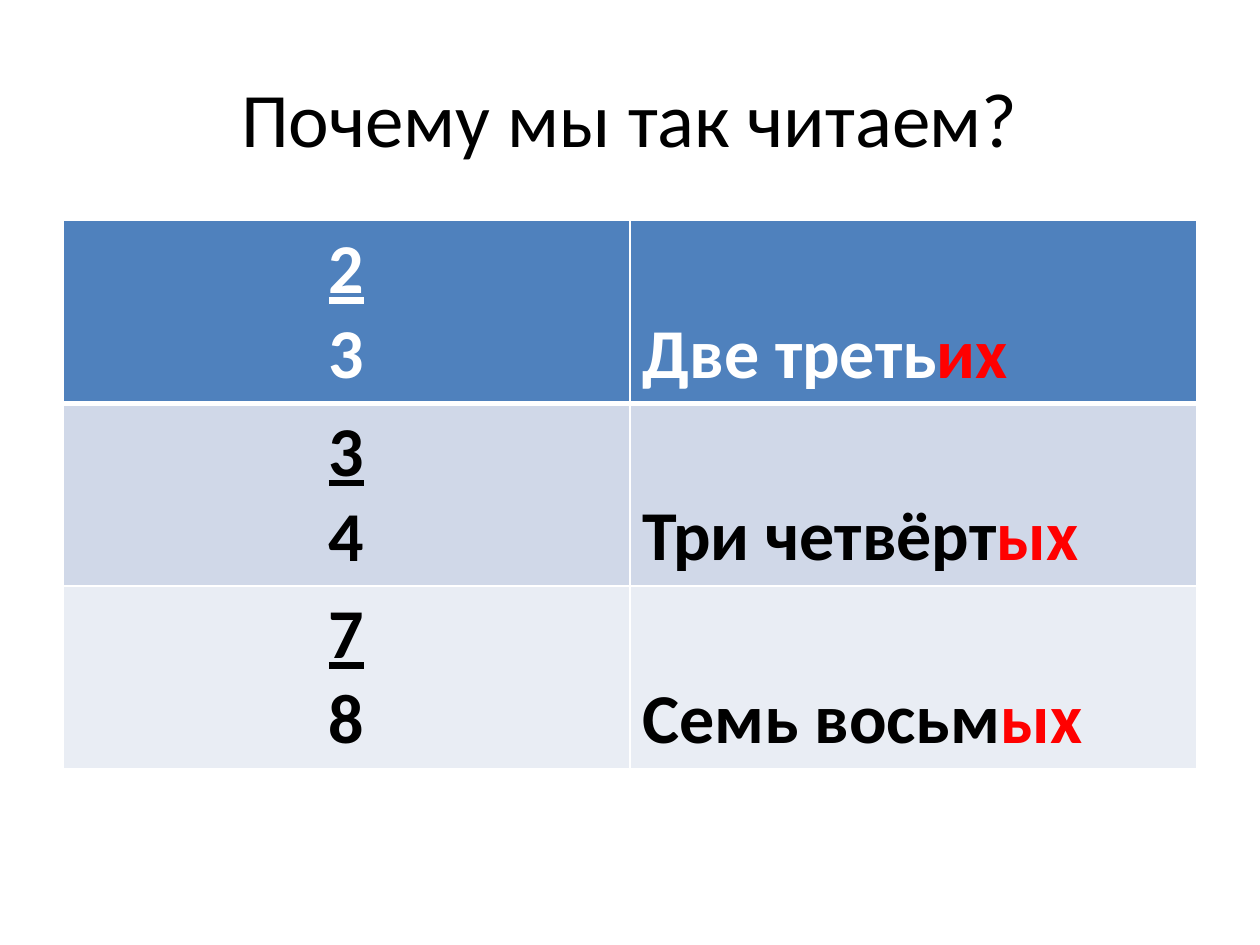
from dataclasses import dataclass

import pptx
import pptx.dml.color
import pptx.enum.text
import pptx.oxml
import pptx.oxml.ns
import pptx.util

Pt = pptx.util.Pt
PP_ALIGN = pptx.enum.text.PP_ALIGN
MSO_ANCHOR = pptx.enum.text.MSO_ANCHOR


@dataclass(frozen=True)
class Theme:
    font: str = "Calibri"
    title_size: float = 44
    cell_size: float = 40
    black: str = "000000"
    white: str = "FFFFFF"
    ending: str = "FF0000"
    header_fill: str = "4F81BD"
    odd_fill: str = "D0D8E8"
    even_fill: str = "E9EDF4"
    thin: float = 1
    thick: float = 3


@dataclass(frozen=True)
class Fraction:
    numerator: str
    denominator: str
    stem: str
    ending: str
    fill: str
    color: str
    top_line: float
    bottom_line: float


THEME = Theme()
FRACTIONS = [
    Fraction("2", "3", "Две треть", "их", THEME.header_fill, THEME.white, THEME.thin, THEME.thick),
    Fraction("3", "4", "Три четвёрт", "ых", THEME.odd_fill, THEME.black, THEME.thick, THEME.thin),
    Fraction("7", "8", "Семь восьм", "ых", THEME.even_fill, THEME.black, THEME.thin, THEME.thin),
]
MARGIN, CONTENT_WIDTH, ROW_HEIGHT = 36, 648, 104.4


def add_run(paragraph, text: str, size: float, color: str,
            bold: bool = False, underline: bool = False) -> None:
    run = paragraph.add_run()
    run.text = text
    run.font.name = THEME.font
    run.font.size = Pt(size)
    run.font.bold = bold
    run.font.underline = underline
    run.font.color.rgb = pptx.dml.color.RGBColor.from_string(color)


def style_cell(cell, fraction: Fraction) -> None:
    cell.fill.solid()
    cell.fill.fore_color.rgb = pptx.dml.color.RGBColor.from_string(fraction.fill)
    cell.vertical_anchor = MSO_ANCHOR.BOTTOM
    # Borders stand before the fill in the cell properties
    widths = {"lnL": THEME.thin, "lnR": THEME.thin,
              "lnT": fraction.top_line, "lnB": fraction.bottom_line}
    properties = cell._tc.get_or_add_tcPr()
    for position, (side, width) in enumerate(widths.items()):
        border = pptx.oxml.parse_xml(
            f'<a:{side} {pptx.oxml.ns.nsdecls("a")} w="{Pt(width)}"><a:solidFill>'
            f'<a:srgbClr val="{THEME.white}"/></a:solidFill></a:{side}>')
        properties.insert(position, border)


def fill_row(number_cell, reading_cell, fraction: Fraction) -> None:
    for cell in (number_cell, reading_cell):
        style_cell(cell, fraction)

    # Underlined numerator above the denominator
    numerator = number_cell.text_frame.paragraphs[0]
    denominator = number_cell.text_frame.add_paragraph()
    for part, text in ((numerator, fraction.numerator), (denominator, fraction.denominator)):
        part.alignment = PP_ALIGN.CENTER
        add_run(part, text, THEME.cell_size, fraction.color, bold=True,
                underline=part is numerator)

    # Reading with its ending picked out
    reading = reading_cell.text_frame.paragraphs[0]
    add_run(reading, fraction.stem, THEME.cell_size, fraction.color, bold=True)
    add_run(reading, fraction.ending, THEME.cell_size, THEME.ending, bold=True)


def main() -> None:
    presentation = pptx.Presentation()
    presentation.slide_width, presentation.slide_height = Pt(720), Pt(540)
    slide = presentation.slides.add_slide(presentation.slide_layouts[6])

    # Title
    title = slide.shapes.add_textbox(Pt(MARGIN), Pt(21.6), Pt(CONTENT_WIDTH), Pt(90)).text_frame
    title.word_wrap = True
    title.vertical_anchor = MSO_ANCHOR.MIDDLE
    title.paragraphs[0].alignment = PP_ALIGN.CENTER
    add_run(title.paragraphs[0], "Почему мы так читаем?", THEME.title_size, THEME.black)

    # Fractions and their readings
    readings = slide.shapes.add_table(
        len(FRACTIONS), 2, Pt(MARGIN), Pt(126),
        Pt(CONTENT_WIDTH), Pt(ROW_HEIGHT * len(FRACTIONS))).table
    for row, fraction in zip(readings.rows, FRACTIONS):
        row.height = Pt(ROW_HEIGHT)
        fill_row(row.cells[0], row.cells[1], fraction)

    presentation.save("out.pptx")


if __name__ == "__main__":
    main()
